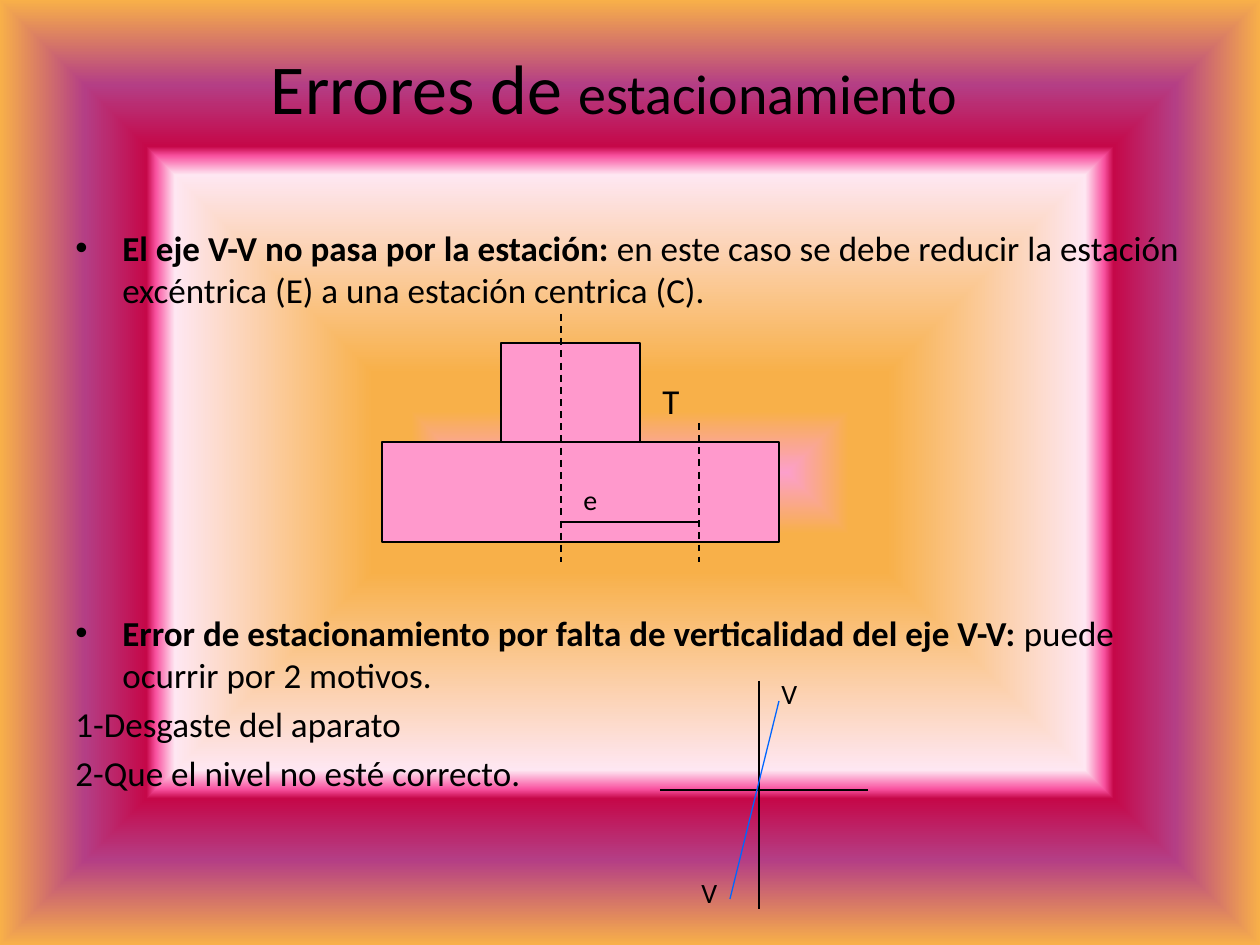
"""Build the slide on instrument set-up errors with its two sketches."""
from lxml.etree import SubElement
from pptx import Presentation
from pptx.dml.color import RGBColor
from pptx.enum.dml import MSO_LINE
from pptx.enum.shapes import MSO_CONNECTOR, MSO_SHAPE
from pptx.enum.text import MSO_ANCHOR, PP_ALIGN
from pptx.oxml import parse_xml
from pptx.oxml.ns import nsdecls, qn
from pptx.util import Emu, Pt

BLACK = RGBColor(0x00, 0x00, 0x00)
PINK = RGBColor(0xFF, 0x99, 0xCC)
BLUE = RGBColor(0x00, 0x66, 0xFF)
GRADIENT = [
    (0, RGBColor(0xFC, 0x9F, 0xCB)), (13, RGBColor(0xF8, 0xB0, 0x49)),
    (21, RGBColor(0xF8, 0xB0, 0x49)), (63, RGBColor(0xFE, 0xE7, 0xF2)),
    (67, RGBColor(0xF9, 0x52, 0xA0)), (69, RGBColor(0xC5, 0x08, 0x49)),
    (82, RGBColor(0xB4, 0x3E, 0x85)), (100, RGBColor(0xF8, 0xB0, 0x49)),
]
SCALE = 914400 / 126


def px(*lengths):
    return [Emu(round(length * SCALE)) for length in lengths]


def write(paragraph, text, size=20, bold=False, color=BLACK):
    run = paragraph.add_run()
    run.text = text
    run.font.name = "Calibri"
    run.font.size = Pt(size)
    run.font.bold = bold
    run.font.color.rgb = color


presentation = Presentation()
presentation.slide_width, presentation.slide_height = px(1260, 945)
slide = presentation.slides.add_slide(presentation.slide_layouts[5])

stops = "".join(
    f'<a:gs pos="{percent * 1000}"><a:srgbClr val="{color}"/></a:gs>'
    for percent, color in GRADIENT
)
background = parse_xml(
    f'<p:bg {nsdecls("p", "a")}><p:bgPr><a:gradFill rotWithShape="0">'
    f'<a:gsLst>{stops}</a:gsLst><a:path path="shape">'
    '<a:fillToRect l="50000" t="50000" r="50000" b="50000"/></a:path>'
    '</a:gradFill><a:effectLst/></p:bgPr></p:bg>'
)
slide.element.find(qn("p:cSld")).insert(0, background)

title = slide.shapes.title
title.left, title.top, title.width, title.height = px(63, 38, 1102, 97)
title.text_frame.vertical_anchor = MSO_ANCHOR.MIDDLE
heading = title.text_frame.paragraphs[0]
heading.alignment = PP_ALIGN.CENTER
write(heading, "Errores de ", size=40)
write(heading, "estacionamiento", size=32)

body = slide.shapes.add_textbox(*px(63, 220, 1134, 624)).text_frame
body.word_wrap = True
errors = [
    ("El eje V-V no pasa por la estación:",
     " en este caso se debe reducir la estación excéntrica (E) a una estación centrica (C).", 0),
    ("Error de estacionamiento por falta de verticalidad del eje V-V:",
     " puede ocurrir por 2 motivos.", 172),
    ("", "1-Desgaste del aparato", 4),
    ("", "2-Que el nivel no esté correcto.", 4),
]
for number, (term, explanation, gap) in enumerate(errors):
    paragraph = body.add_paragraph() if number else body.paragraphs[0]
    paragraph.space_before = Pt(gap)
    properties = paragraph._p.get_or_add_pPr()
    indent = px(47)[0]
    properties.set("marL", str(indent))
    properties.set("indent", str(-indent))
    if term:
        SubElement(properties, qn("a:buFont")).set("typeface", "Arial")
        SubElement(properties, qn("a:buChar")).set("char", "•")
        write(paragraph, term, bold=True)
    write(paragraph, explanation)

for block in [(382, 442, 397, 100), (501, 343, 139, 99)]:
    rectangle = slide.shapes.add_shape(MSO_SHAPE.RECTANGLE, *px(*block))
    rectangle.shadow.inherit = False
    rectangle.fill.solid()
    rectangle.fill.fore_color.rgb = PINK
    rectangle.line.color.rgb = BLACK
    rectangle.line.width = Pt(0.75)

axes = [
    ((561, 314, 561, 562), BLACK, True),
    ((699, 423, 699, 562), BLACK, True),
    ((561, 522, 699, 522), BLACK, False),
    ((759, 681, 759, 909), BLACK, False),
    ((660, 790, 868, 790), BLACK, False),
    ((779, 701, 730, 899), BLUE, False),
]
for ends, color, dashed in axes:
    axis = slide.shapes.add_connector(MSO_CONNECTOR.STRAIGHT, *px(*ends))
    axis.line.color.rgb = color
    axis.line.width = Pt(1 if dashed else 0.75)
    if dashed:
        axis.line.dash_style = MSO_LINE.DASH
    SubElement(axis._element.spPr, qn("a:effectLst"))

labels = [
    ("e", (571, 476, 100, 47), 16),
    ("T", (650, 373, 100, 54), 20),
    ("V", (769, 670, 59, 47), 16),
    ("V", (689, 869, 59, 47), 16),
]
for letter, place, size in labels:
    label = slide.shapes.add_textbox(*px(*place)).text_frame
    label.word_wrap = True
    write(label.paragraphs[0], letter, size=size)

presentation.save("out.pptx")
